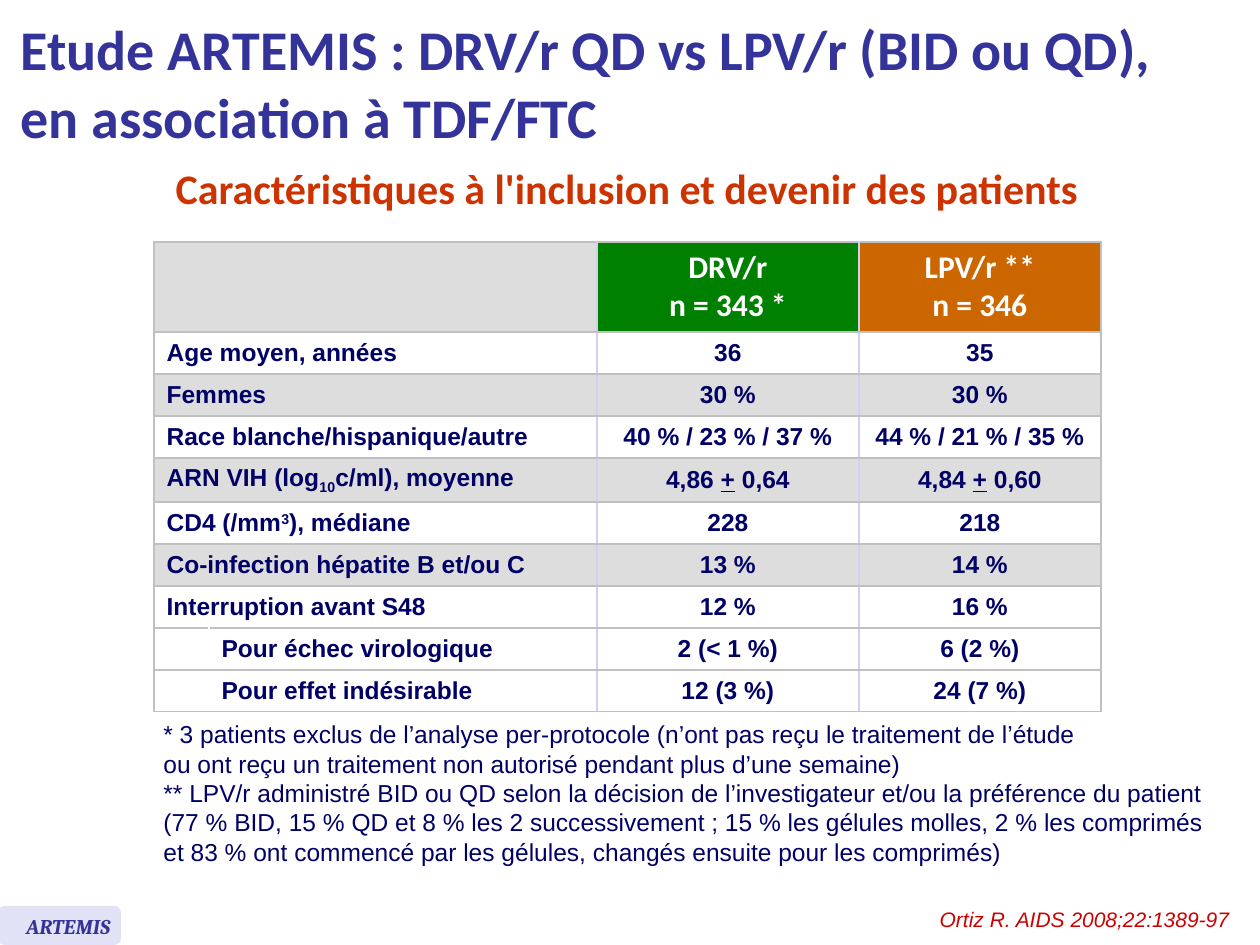
from copy import deepcopy

from pptx import Presentation
from pptx.dml.color import RGBColor
from pptx.enum.shapes import MSO_SHAPE as Shape
from pptx.enum.text import MSO_ANCHOR as Anchor, MSO_AUTO_SIZE as Auto, PP_ALIGN as Align
from pptx.oxml import parse_xml
from pptx.oxml.ns import nsdecls, qn
from pptx.util import Emu, Pt

SCALE = 914400 / 126
NAVY, BLUE, GREY, WHITE = "000066", "333399", "DDDDDD", "FFFFFF"
EDGE, INNER = "C0C0C0", "D0D0F0"

TITLE = {"size": 32, "name": "Calibri", "color": BLUE, "bold": True}
SUB = {"size": 24, "name": "Calibri", "color": "CC3300", "bold": True}
HEAD = {"size": 18, "name": "Calibri", "color": WHITE, "bold": True}
BODY = {"size": 14, "name": "Arial", "color": NAVY, "bold": True}
NOTE = {"size": 14, "name": "Arial", "color": NAVY}
CITE = {"size": 12, "name": "Arial", "color": "CC0000", "italic": True}
BADGE = {"size": 12, "name": "Cambria", "color": BLUE, "bold": True, "italic": True}

COLS = [55, 388, 262, 242]
ROWS = [90, 42, 42, 42, 44, 42, 42, 42, 42, 42]
PLUS = ("+", {"underline": True})
# Each row: fill, label, DRV/r value, LPV/r value; a label of None leaves it blank.
DATA = [
    (GREY, None, "DRV/r\vn = 343 *", "LPV/r **\vn = 346"),
    (WHITE, "Age moyen, années", "36", "35"),
    (GREY, "Femmes", "30 %", "30 %"),
    (WHITE, "Race blanche/hispanique/autre", "40 % / 23 % / 37 %", "44 % / 21 % / 35 %"),
    (GREY, ["ARN VIH (log", ("10", {"base": -25}), "c/ml), moyenne"],
     ["4,86 ", PLUS, " 0,64"], ["4,84 ", PLUS, " 0,60"]),
    (WHITE, ["CD4 (/mm", ("3", {"base": 30}), "), médiane"], "228", "218"),
    (GREY, "Co-infection hépatite B et/ou C", "13 %", "14 %"),
    (WHITE, "Interruption avant S48", "12 %", "16 %"),
    (WHITE, "Pour échec virologique", "2 (< 1 %)", "6 (2 %)"),
    (WHITE, "Pour effet indésirable", "12 (3 %)", "24 (7 %)"),
]
SUBROWS = (8, 9)
NOTES = [
    "* 3 patients exclus de l’analyse per-protocole (n’ont pas reçu le traitement de l’étude"
    "\vou ont reçu un traitement non autorisé pendant plus d’une semaine)",
    "** LPV/r administré BID ou QD selon la décision de l’investigateur et/ou la préférence du patient",
    "(77 % BID, 15 % QD et 8 % les 2 successivement ; 15 % les gélules molles, 2 % les comprimés",
    "et 83 % ont commencé par les gélules, changés ensuite pour les comprimés)",
]


def px(n):
    return Emu(round(n * SCALE))


def rgb(code):
    return RGBColor.from_string(code)


def style(font, fmt):
    for key, val in fmt.items():
        if key == "color":
            font.color.rgb = rgb(val)
        elif key == "base":
            font._element.set("baseline", str(val * 1000))
        else:
            setattr(font, key, Pt(val) if key == "size" else val)


def write(para, text, fmt, align=Align.LEFT):
    """Fill a paragraph from a string or a list of strings and (text, format) pairs."""
    para.alignment = align
    for part in [text] if isinstance(text, str) else text:
        words, extra = (part, {}) if isinstance(part, str) else part
        for i, line in enumerate(words.split("\v")):
            if i:
                para.add_line_break()
            run = para.add_run()
            run.text = line
            style(run.font, {**fmt, **extra})
    for mark in para._p.findall(qn("a:br")):
        mark.insert(0, deepcopy(para.runs[0].font._element))


def add_text(slide, box, lines, fmt, align=Align.LEFT, wrap=True):
    frame = slide.shapes.add_textbox(*map(px, box)).text_frame
    frame.word_wrap = wrap
    frame.auto_size = Auto.SHAPE_TO_FIT_TEXT
    for i, line in enumerate(lines):
        para = frame.add_paragraph() if i else frame.paragraphs[0]
        write(para, line, fmt, align)


def add_title(slide, box, text):
    title = slide.shapes.title
    title.left, title.top, title.width, title.height = map(px, box)
    frame = title.text_frame
    frame.auto_size = Auto.NONE
    frame.vertical_anchor = Anchor.MIDDLE
    write(frame.paragraphs[0], text, TITLE)


def add_edges(cell, sides):
    props = cell._tc.get_or_add_tcPr()
    for side, code in sides.items():
        props.append(parse_xml(
            f'<a:ln{side} {nsdecls("a")} w="12700"><a:solidFill>'
            f'<a:srgbClr val="{code}"/></a:solidFill></a:ln{side}>'))


def edges(row, col):
    """Give the border colours of a cell; sub-rows have no line after the indent."""
    sides = {"L": INNER if col > 1 else EDGE, "R": EDGE if col == 3 else INNER,
             "T": EDGE, "B": EDGE}
    if row in SUBROWS and col < 2:
        del sides["L" if col else "R"]
    return sides


def add_grid(slide, left, top):
    box = map(px, (left, top, sum(COLS), sum(ROWS)))
    table = slide.shapes.add_table(len(ROWS), len(COLS), *box).table
    table.first_row = table.horz_banding = False
    for col, wide in zip(table.columns, COLS):
        col.width = px(wide)
    for r, (row, high) in enumerate(zip(table.rows, ROWS)):
        row.height = px(high)
        shade, *texts = DATA[r]
        sub = r in SUBROWS
        if not sub:
            table.cell(r, 0).merge(table.cell(r, 1))
        fills = [shade] * 4 if r else [GREY, GREY, "008000", "CC6600"]
        label, *vals = texts
        items = [None, label, *vals] if sub else [label, None, *vals]
        for c, text in enumerate(items):
            cell = table.cell(r, c)
            add_edges(cell, edges(r, c))
            cell.fill.solid()
            cell.fill.fore_color.rgb = rgb(fills[c])
            cell.vertical_anchor = Anchor.MIDDLE
            if text is None:
                cell.margin_top = cell.margin_bottom = 0
                continue
            align = Align.CENTER if c > 1 else Align.LEFT
            write(cell.text_frame.paragraphs[0], text, BODY if r else HEAD, align)


def add_badge(slide):
    tab = slide.shapes.add_shape(Shape.ROUNDED_RECTANGLE, *map(px, (-2, 906, 123, 39)))
    tab.shadow.inherit = False
    tab.fill.solid()
    tab.fill.fore_color.rgb = rgb("E2E2F6")
    tab.line.fill.background()
    add_text(slide, (10, 907, 117, 38), ["ARTEMIS"], BADGE, Align.CENTER)


def main():
    deck = Presentation()
    deck.slide_width, deck.slide_height = px(1260), px(945)
    slide = deck.slides.add_slide(deck.slide_layouts[5])
    add_title(slide, (8, 6, 1252, 152),
              "Etude ARTEMIS : DRV/r QD vs LPV/r (BID ou QD),\ven association à TDF/FTC")
    add_grid(slide, 154, 242)
    add_text(slide, (864, 900, 378, 38), ["Ortiz R. AIDS 2008;22:1389-97"], CITE, Align.RIGHT)
    add_text(slide, (151, 713, 1076, 161), NOTES, NOTE)
    add_text(slide, (161, 156, 932, 63),
             ["Caractéristiques à l'inclusion et devenir des patients"], SUB, Align.CENTER, False)
    add_badge(slide)
    deck.save("out.pptx")


if __name__ == "__main__":
    main()
